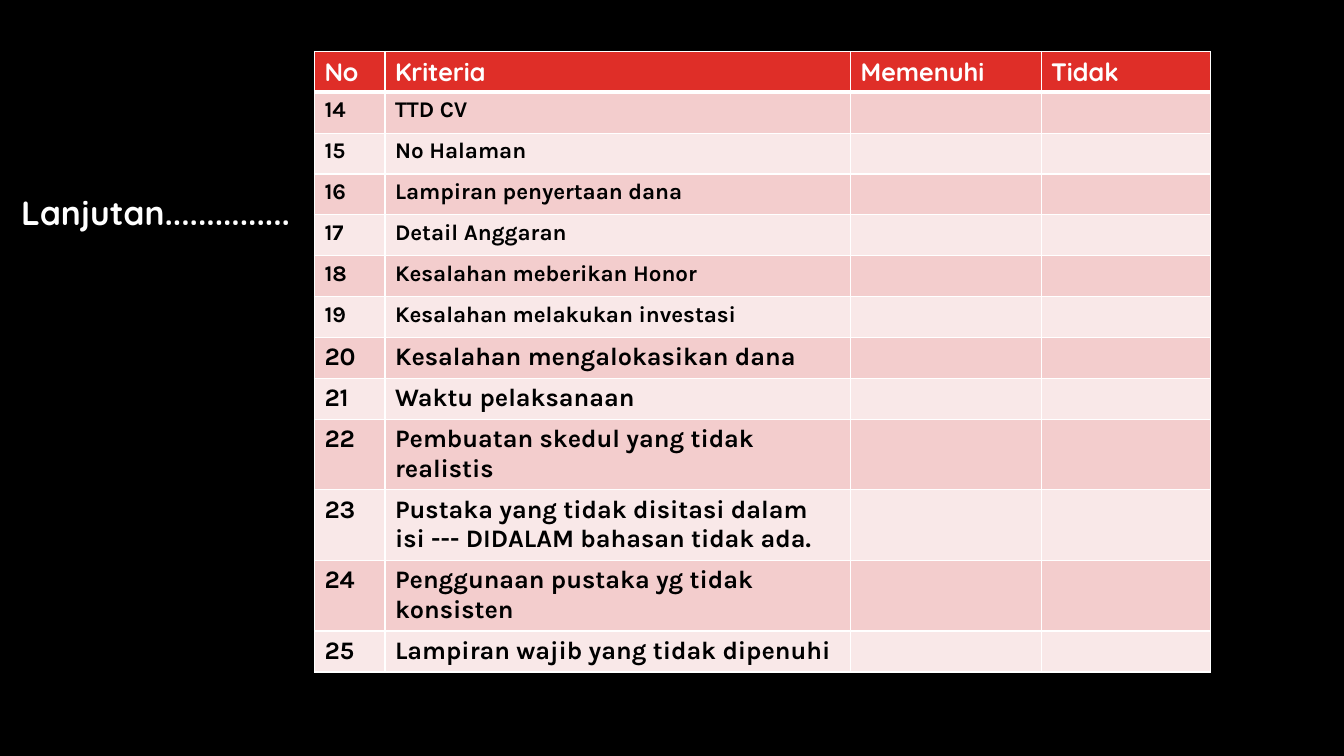
"""Build the slide with the continued checklist of proposal criteria."""
import pptx
import pptx.dml.color
import pptx.enum.text
import pptx.oxml
import pptx.oxml.ns
import pptx.util
from pptx.util import Pt


def rgb(value):
    return pptx.dml.color.RGBColor.from_string(value)


def write(paragraph, text, font_name, size, colour):
    run = paragraph.add_run()
    run.text = text
    formats = {"name": font_name, "size": Pt(size), "bold": True}
    for attribute, value in formats.items():
        setattr(run.font, attribute, value)
    run.font.color.rgb = rgb(colour)


headings = ["No", "Kriteria", "Memenuhi", "Tidak"]
criteria = [
    "TTD CV",
    "No Halaman",
    "Lampiran penyertaan dana",
    "Detail Anggaran",
    "Kesalahan meberikan Honor",
    "Kesalahan melakukan investasi",
    "Kesalahan mengalokasikan dana",
    "Waktu pelaksanaan",
    "Pembuatan skedul yang tidak realistis",
    "Pustaka yang tidak disitasi dalam isi --- DIDALAM bahasan tidak ada.",
    "Penggunaan pustaka yg tidak konsisten",
    "Lampiran wajib yang tidak dipenuhi",
]
first_number = 14
first_large_number = 20
column_widths = [50.4, 332.6, 136.1, 121]
row_height = 29.2

presentation = pptx.Presentation()
presentation.slide_width = Pt(960)
presentation.slide_height = Pt(540)
slide = presentation.slides.add_slide(presentation.slide_layouts[5])
slide.background.fill.solid()
slide.background.fill.fore_color.rgb = rgb("000000")

title = slide.shapes.title
title_place = {"left": 7.9, "top": 133.2, "width": 216.7, "height": 36}
for attribute, value in title_place.items():
    setattr(title, attribute, Pt(value))
title_format = {
    "word_wrap": False,
    "auto_size": pptx.enum.text.MSO_AUTO_SIZE.SHAPE_TO_FIT_TEXT,
    "vertical_anchor": pptx.enum.text.MSO_ANCHOR.TOP,
}
for attribute, value in title_format.items():
    setattr(title.text_frame, attribute, value)
title_line = title.text_frame.paragraphs[0]
title_line.alignment = pptx.enum.text.PP_ALIGN.LEFT
write(title_line, "Lanjutan...............", "Quicksand", 24, "FFFFFF")

rows = [headings]
for number, criterion in enumerate(criteria, first_number):
    rows.append([str(number), criterion, "", ""])

checklist = slide.shapes.add_table(
    len(rows), len(headings), Pt(224.6), Pt(36.7),
    Pt(sum(column_widths)), Pt(row_height * len(rows)),
).table
for column, width in zip(checklist.columns, column_widths):
    column.width = Pt(width)

for row_index, row in enumerate(rows):
    checklist.rows[row_index].height = Pt(row_height)
    if row_index == 0:
        fill, text_format = "DF2E28", ("Quicksand", 18, "FFFFFF")
    else:
        fill = "F3CDCD" if row_index % 2 else "F9E8E8"
        size = 18 if int(row[0]) >= first_large_number else 16
        text_format = ("Karla", size, "000000")
    borders = {
        "lnL": 1,
        "lnR": 1,
        "lnT": 3 if row_index == 1 else 1,
        "lnB": 3 if row_index == 0 else 1,
    }
    for column_index, text in enumerate(row):
        cell = checklist.cell(row_index, column_index)
        if text:
            write(cell.text_frame.paragraphs[0], text, *text_format)
        properties = cell._tc.get_or_add_tcPr()
        for side, weight in borders.items():
            properties.append(pptx.oxml.parse_xml(
                f'<a:{side} {pptx.oxml.ns.nsdecls("a")} w="{Pt(weight)}">'
                '<a:solidFill><a:srgbClr val="FFFFFF"/></a:solidFill>'
                f'</a:{side}>'
            ))
        cell.fill.solid()
        cell.fill.fore_color.rgb = rgb(fill)

presentation.save("out.pptx")
